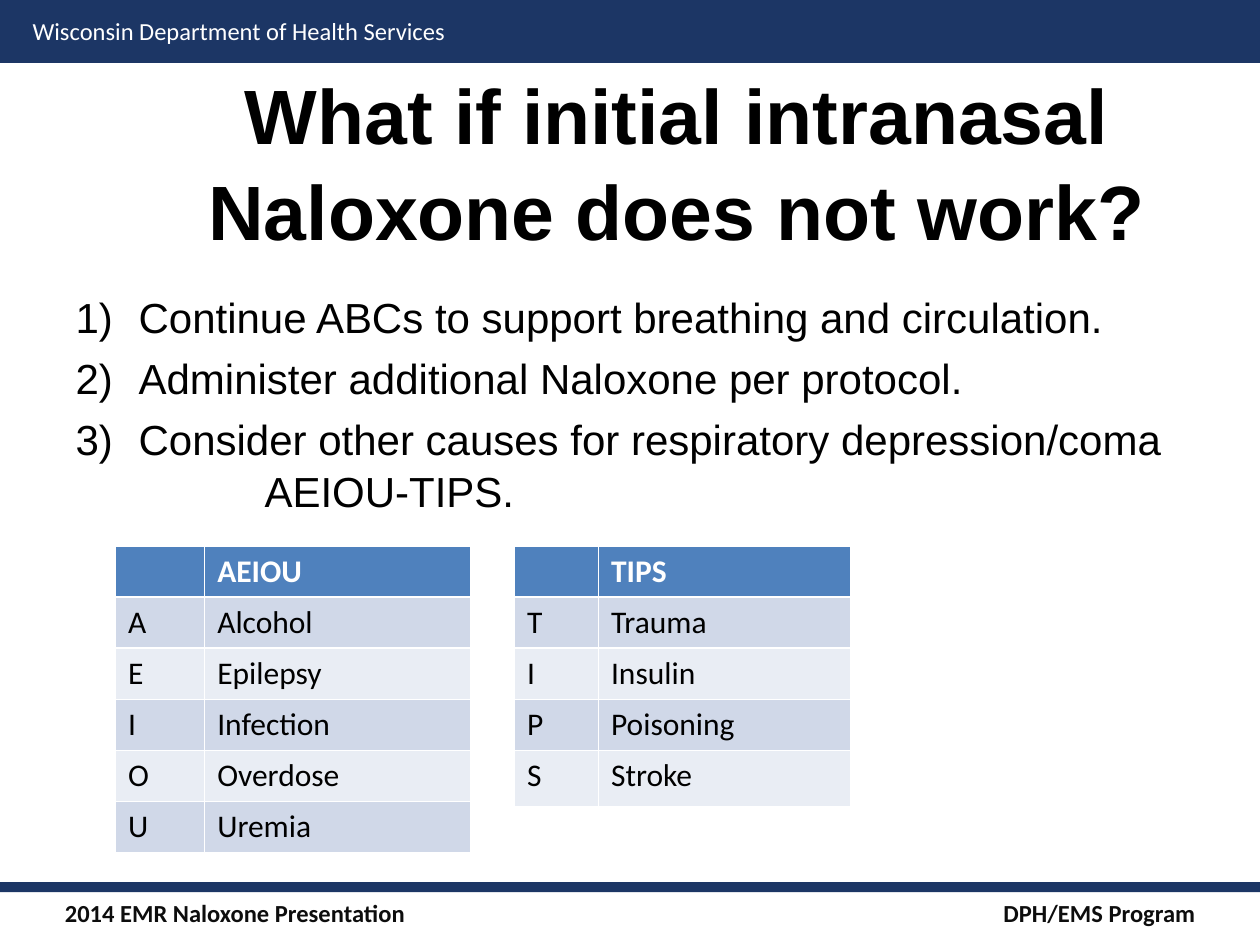
import pptx
import pptx.dml.color
import pptx.enum.shapes
import pptx.enum.text
import pptx.oxml.ns
import pptx.util
from lxml import etree

Pt = pptx.util.Pt
ALIGN = pptx.enum.text.PP_ALIGN
ANCHOR = pptx.enum.text.MSO_ANCHOR

COLOURS = {
    "navy": "1C3665",
    "header": "4F81BD",
    "band_dark": "D0D8E8",
    "band_light": "E9EDF4",
    "black": "000000",
    "ink": "0D0D0D",
    "white": "FFFFFF",
}

TITLE_FONT = {"name": "Arial", "size": Pt(44), "bold": True}
BODY_FONT = {"name": "Arial", "size": Pt(24), "bold": False}
BAND_FONT = {"name": "Calibri", "size": Pt(14), "bold": False}
FOOTER_FONT = {**BAND_FONT, "bold": True}
CELL_FONT = {"name": "Calibri", "size": Pt(18), "bold": False}
HEADER_FONT = {**CELL_FONT, "bold": True}

ROW_HEIGHT = 29.2
TABLE_TOP = 312


def colour(name):
    return pptx.dml.color.RGBColor.from_string(COLOURS[name])


def set_attributes(target, values):
    for name, value in values.items():
        setattr(target, name, value)


def place(shape, left, top, width, height):
    set_attributes(shape, {"left": Pt(left), "top": Pt(top),
                           "width": Pt(width), "height": Pt(height)})


def fill_solid(target, colour_name):
    target.fill.solid()
    target.fill.fore_color.rgb = colour(colour_name)


def add_span(para, text, font, colour_name):
    span = para.add_run()
    span.text = text
    set_attributes(span.font, font)
    span.font.color.rgb = colour(colour_name)


def add_properties_child(para, tag, **attributes):
    properties = para._p.get_or_add_pPr()
    child = etree.SubElement(properties, pptx.oxml.ns.qn(tag))
    set_xml(child, attributes)
    return child


def set_xml(element, attributes):
    for name, value in attributes.items():
        element.set(name, str(value))


def add_bar(page, top, height):
    bar = page.shapes.add_shape(pptx.enum.shapes.MSO_SHAPE.RECTANGLE,
                                Pt(0), Pt(top), Pt(720), Pt(height))
    bar.shadow.inherit = False
    fill_solid(bar, "navy")
    bar.line.fill.background()


def add_label(page, bounds, text, font, colour_name, right_tab=None):
    box = page.shapes.add_textbox(*map(Pt, bounds))
    box.text_frame.word_wrap = True
    para = box.text_frame.paragraphs[0]
    if right_tab:
        tabs = add_properties_child(para, "a:tabLst")
        tab = etree.SubElement(tabs, pptx.oxml.ns.qn("a:tab"))
        set_xml(tab, {"pos": Pt(right_tab), "algn": "r"})
    add_span(para, text, font, colour_name)


def fill_title(page, text):
    title = page.shapes.title
    place(title, 90, 44.64, 594, 93.6)
    set_attributes(title.text_frame, {
        "word_wrap": True, "vertical_anchor": ANCHOR.MIDDLE,
        "auto_size": pptx.enum.text.MSO_AUTO_SIZE.NONE})
    para = title.text_frame.paragraphs[0]
    set_attributes(para, {"alignment": ALIGN.CENTER, "line_spacing": 1.04})
    add_span(para, text, TITLE_FONT, "black")


def fill_steps(page, steps, continuation):
    """Number the steps and indent the continuation below the last one."""
    body = page.placeholders[1]
    place(body, 36, 162, 648, 264)
    frame = body.text_frame
    set_attributes(frame, {"word_wrap": True, "vertical_anchor": ANCHOR.TOP,
                           "auto_size": pptx.enum.text.MSO_AUTO_SIZE.NONE})
    for index, text in enumerate(steps + [continuation]):
        para = frame.add_paragraph() if index else frame.paragraphs[0]
        numbered = index < len(steps)
        set_attributes(para, {
            "alignment": ALIGN.LEFT, "line_spacing": 1.04,
            "space_before": Pt(4.8 if numbered and index else 0)})
        properties = para._p.get_or_add_pPr()
        if numbered:
            set_xml(properties, {"marL": Pt(36), "indent": Pt(-36)})
            add_properties_child(para, "a:buFont", typeface="+mj-lt")
            add_properties_child(para, "a:buAutoNum", type="arabicParenR")
        else:
            set_xml(properties, {"marL": Pt(108), "indent": 0})
            add_properties_child(para, "a:buNone")
        add_span(para, text, BODY_FONT, "black")


def add_mnemonic_table(page, left, widths, heading, causes, last_height=ROW_HEIGHT):
    """Put each cause beside its first letter, under the heading."""
    rows = [("", heading)] + [(cause[0], cause) for cause in causes]
    frame = page.shapes.add_table(len(rows), 2, Pt(left), Pt(TABLE_TOP),
                                  Pt(sum(widths)), Pt(ROW_HEIGHT * len(rows)))
    table = frame.table
    for column, width in zip(table.columns, widths):
        column.width = Pt(width)
    for index, texts in enumerate(rows):
        table.rows[index].height = Pt(ROW_HEIGHT)
        band = "band_dark" if index % 2 else "band_light"
        look = (CELL_FONT, "black", band) if index else (HEADER_FONT, "white", "header")
        font, text_colour, fill = look
        for cell, text in zip(table.rows[index].cells, texts):
            fill_solid(cell, fill)
            if text:
                add_span(cell.text_frame.paragraphs[0], text, font, text_colour)
    table.rows[len(rows) - 1].height = Pt(last_height)


def main():
    deck = pptx.Presentation()
    deck.slide_width, deck.slide_height = Pt(720), Pt(540)
    page = deck.slides.add_slide(deck.slide_layouts[1])

    add_bar(page, 504, 5.76)
    add_bar(page, 0, 36)
    add_label(page, (30, 509.76, 672, 24.48),
              "2014 EMR Naloxone Presentation\tDPH/EMS Program",
              FOOTER_FONT, "ink", right_tab=646)
    add_label(page, (11.5, 5.76, 252.7, 24.48),
              "Wisconsin Department of Health Services", BAND_FONT, "white")

    fill_title(page, "What if initial intranasal Naloxone does not work?")
    fill_steps(page, [
        "Continue ABCs to support breathing and circulation.",
        "Administer additional Naloxone per protocol.",
        "Consider other causes for respiratory depression/coma",
    ], "AEIOU-TIPS.")

    add_mnemonic_table(page, 66, (51, 152), "AEIOU",
                       ["Alcohol", "Epilepsy", "Infection", "Overdose", "Uremia"])
    add_mnemonic_table(page, 294, (48, 144), "TIPS",
                       ["Trauma", "Insulin", "Poisoning", "Stroke"], last_height=32.5)
    deck.save("out.pptx")


if __name__ == "__main__":
    main()
